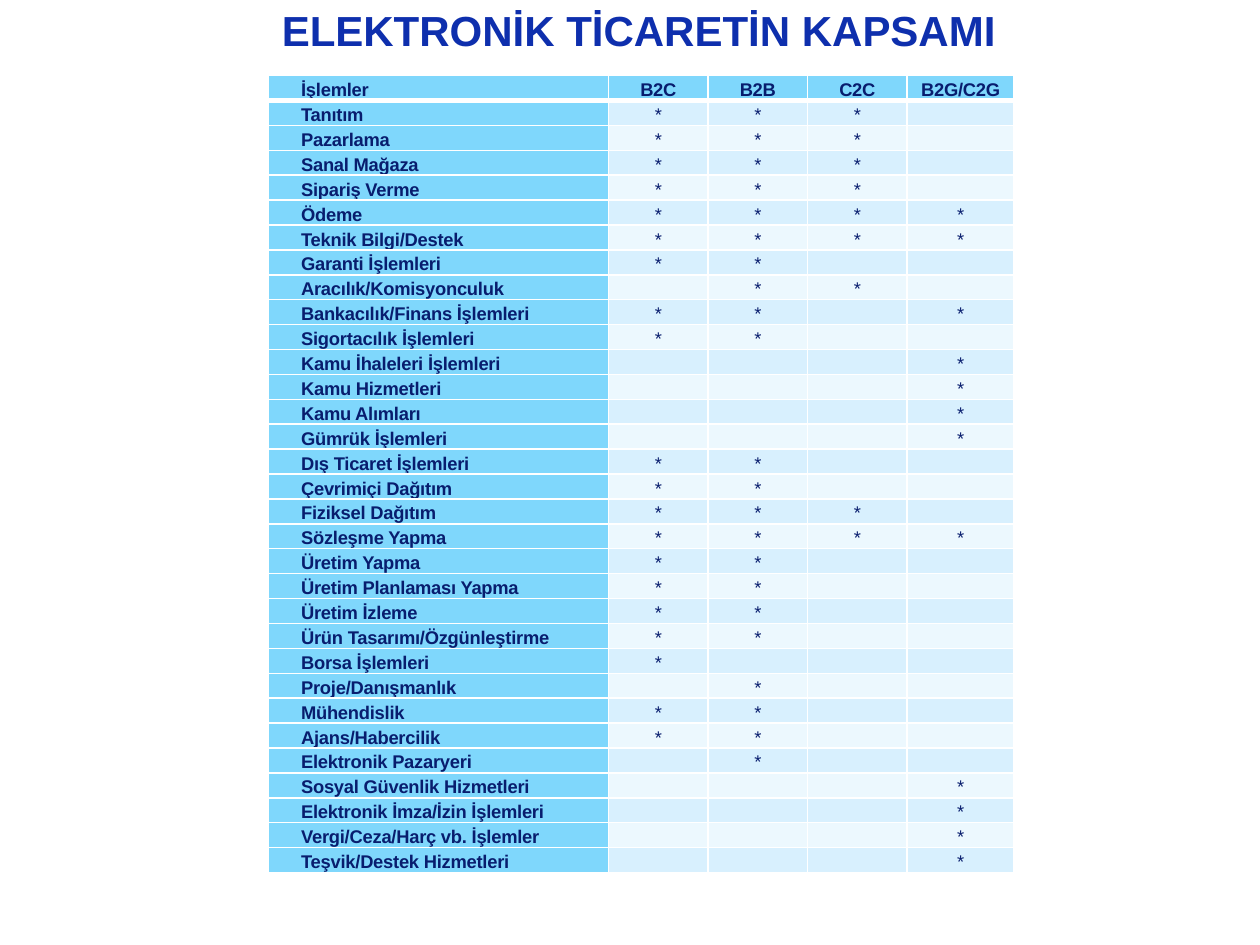
from lxml.etree import SubElement
from pptx import Presentation
from pptx.dml.color import RGBColor
from pptx.enum.text import MSO_ANCHOR, PP_ALIGN
from pptx.oxml.ns import qn
from pptx.util import Inches, Pt

TITLE = "ELEKTRONİK TİCARETİN KAPSAMI"
HEADINGS = ["İşlemler", "B2C", "B2B", "C2C", "B2G/C2G"]
OPERATIONS = [
    ("Tanıtım", "B2C B2B C2C"),
    ("Pazarlama", "B2C B2B C2C"),
    ("Sanal Mağaza", "B2C B2B C2C"),
    ("Sipariş Verme", "B2C B2B C2C"),
    ("Ödeme", "B2C B2B C2C B2G/C2G"),
    ("Teknik Bilgi/Destek", "B2C B2B C2C B2G/C2G"),
    ("Garanti İşlemleri", "B2C B2B"),
    ("Aracılık/Komisyonculuk", "B2B C2C"),
    ("Bankacılık/Finans İşlemleri", "B2C B2B B2G/C2G"),
    ("Sigortacılık İşlemleri", "B2C B2B"),
    ("Kamu İhaleleri İşlemleri", "B2G/C2G"),
    ("Kamu Hizmetleri", "B2G/C2G"),
    ("Kamu Alımları", "B2G/C2G"),
    ("Gümrük İşlemleri", "B2G/C2G"),
    ("Dış Ticaret İşlemleri", "B2C B2B"),
    ("Çevrimiçi Dağıtım", "B2C B2B"),
    ("Fiziksel Dağıtım", "B2C B2B C2C"),
    ("Sözleşme Yapma", "B2C B2B C2C B2G/C2G"),
    ("Üretim Yapma", "B2C B2B"),
    ("Üretim Planlaması Yapma", "B2C B2B"),
    ("Üretim İzleme", "B2C B2B"),
    ("Ürün Tasarımı/Özgünleştirme", "B2C B2B"),
    ("Borsa İşlemleri", "B2C"),
    ("Proje/Danışmanlık", "B2B"),
    ("Mühendislik", "B2C B2B"),
    ("Ajans/Habercilik", "B2C B2B"),
    ("Elektronik Pazaryeri", "B2B"),
    ("Sosyal Güvenlik Hizmetleri", "B2G/C2G"),
    ("Elektronik İmza/İzin İşlemleri", "B2G/C2G"),
    ("Vergi/Ceza/Harç vb. İşlemler", "B2G/C2G"),
    ("Teşvik/Destek Hizmetleri", "B2G/C2G"),
]
THEME = {
    "font": "Arial", "title_size": 24, "cell_size": 10.5, "line": 14.2,
    "title": "0E2FAD", "text": "081D6E", "head": "7FD7FC",
    "bands": ["D8F0FE", "ECF8FE"], "border": "FFFFFF",
}
COLUMN_WIDTHS = [2.7, 0.79, 0.79, 0.79, 0.85]
CELL_FORMAT = {"margin_left": Inches(0.06), "margin_right": Inches(0.06),
               "margin_top": 0, "margin_bottom": 0}
TABLE_FORMAT = {"first_row": False, "horz_banding": False}
TITLE_FORMAT = {"word_wrap": True, "vertical_anchor": MSO_ANCHOR.MIDDLE}


def apply(target, formats):
    for name, value in formats.items():
        setattr(target, name, value)


def write(paragraph, text, size, color, bold):
    run = paragraph.add_run()
    run.text = text
    apply(run.font, {"name": THEME["font"], "size": Pt(size), "bold": bold})
    run.font.color.rgb = RGBColor.from_string(color)
    return run


def add_borders(cell, bottom_width):
    properties = cell._tc.get_or_add_tcPr()
    widths = {"a:lnL": 1, "a:lnR": 1, "a:lnT": 1, "a:lnB": bottom_width}
    for position, (side, width) in enumerate(widths.items()):
        line = SubElement(properties, qn(side), w=str(Pt(width)))
        fill = SubElement(line, qn("a:solidFill"))
        SubElement(fill, qn("a:srgbClr"), val=THEME["border"])
        properties.insert(position, line)


def fill_cell(cell, text, row, column):
    header, label = row == 0, column == 0
    apply(cell, CELL_FORMAT)
    cell.fill.solid()
    color = THEME["head"] if header or label else THEME["bands"][(row - 1) % 2]
    cell.fill.fore_color.rgb = RGBColor.from_string(color)
    add_borders(cell, 3 if header else 1)

    paragraph = cell.text_frame.paragraphs[0]
    paragraph.line_spacing = Pt(THEME["line"])
    if label:
        paragraph.alignment = PP_ALIGN.LEFT if header else PP_ALIGN.JUSTIFY
        paragraph._p.get_or_add_pPr().set("indent", str(Inches(0.2)))
    else:
        paragraph.alignment = PP_ALIGN.CENTER
    if text:
        run = write(paragraph, text, THEME["cell_size"], THEME["text"], header or label)
        run._r.get_or_add_rPr().set("spc", "-10")
    else:
        SubElement(paragraph._p, qn("a:endParaRPr"), sz=str(int(THEME["cell_size"] * 100)))


def add_title(slide):
    heading = slide.shapes.add_textbox(Inches(0.57), Inches(-0.39), Inches(9), Inches(1.25))
    apply(heading.text_frame, TITLE_FORMAT)
    paragraph = heading.text_frame.paragraphs[0]
    paragraph.alignment = PP_ALIGN.CENTER
    write(paragraph, TITLE, THEME["title_size"], THEME["title"], True)


def add_scope_table(slide):
    rows = [HEADINGS]
    for operation, scope in OPERATIONS:
        rows.append([operation] + ["*" if kind in scope.split() else "" for kind in HEADINGS[1:]])
    scope_table = slide.shapes.add_table(
        len(rows), len(HEADINGS), Inches(2.13), Inches(0.6),
        Inches(sum(COLUMN_WIDTHS)), Inches(6.22)).table
    apply(scope_table, TABLE_FORMAT)
    for column, width in zip(scope_table.columns, COLUMN_WIDTHS):
        column.width = Inches(width)
    for row, entries in enumerate(rows):
        for column, text in enumerate(entries):
            fill_cell(scope_table.cell(row, column), text, row, column)


def main():
    """Build the slide on the scope of electronic commerce."""
    presentation = Presentation()
    apply(presentation, {"slide_width": Inches(10), "slide_height": Inches(7.5)})
    slide = presentation.slides.add_slide(presentation.slide_layouts[6])
    add_title(slide)
    add_scope_table(slide)
    presentation.save("out.pptx")


if __name__ == "__main__":
    main()
